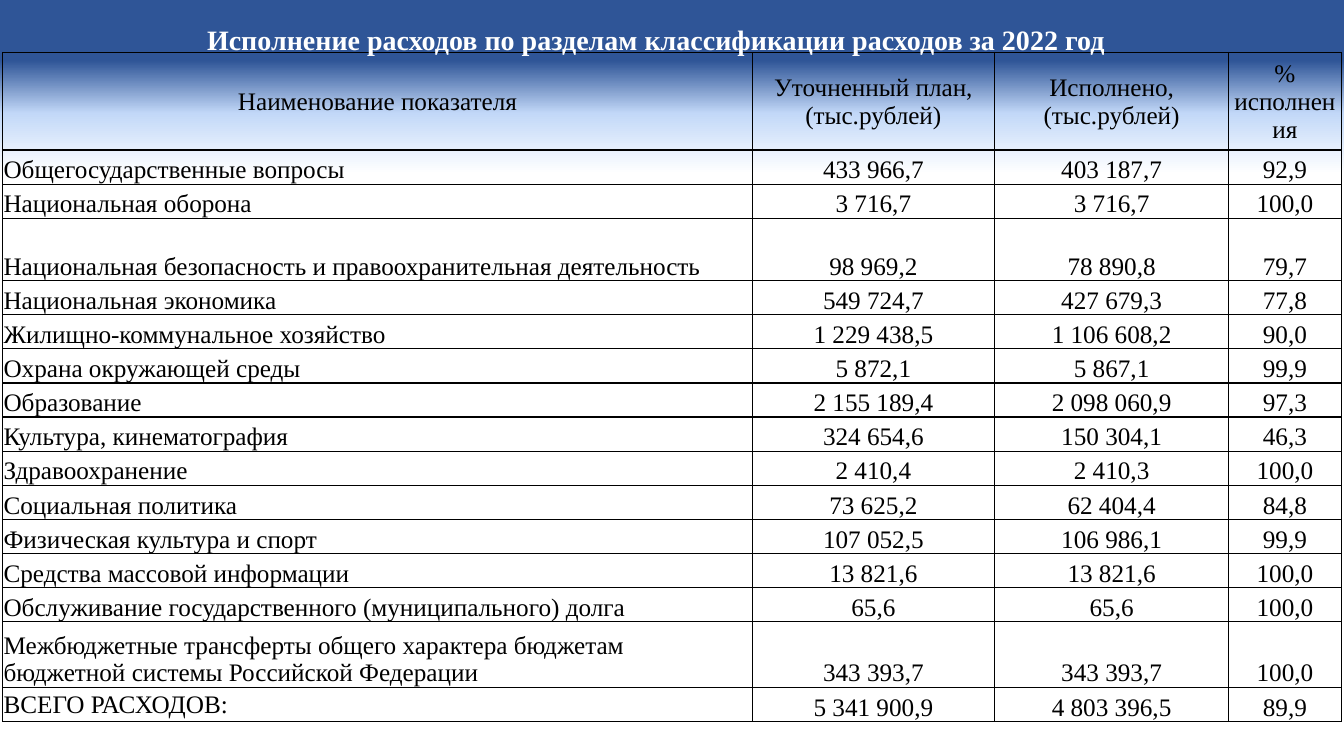
from dataclasses import dataclass

from lxml.etree import SubElement
from pptx import Presentation
from pptx.dml.color import RGBColor
from pptx.enum.text import MSO_ANCHOR, MSO_AUTO_SIZE, PP_ALIGN
from pptx.oxml.ns import qn
from pptx.util import Cm, Pt


@dataclass(frozen=True)
class Theme:
    font: str = "Times New Roman"
    title_size: int = 20
    table_size: int = 18
    title_color: str = "FFFFFF"
    text_color: str = "000000"
    border_color: str = "000000"
    border_width: int = 1
    background: tuple = ((8, "2F5597"), (15, "C2D8F8"), (23, "FFFFFF"))


THEME = Theme()

TITLE = "Исполнение расходов по разделам классификации расходов за 2022 год"
HEADER = ("Наименование показателя", "Уточненный план, (тыс.рублей)",
          "Исполнено, (тыс.рублей)", "% исполнения")
EXPENSES = (
    ("Общегосударственные вопросы", "433 966,7", "403 187,7", "92,9"),
    ("Национальная оборона", "3 716,7", "3 716,7", "100,0"),
    ("Национальная безопасность и правоохранительная деятельность",
     "98 969,2", "78 890,8", "79,7"),
    ("Национальная экономика", "549 724,7", "427 679,3", "77,8"),
    ("Жилищно-коммунальное хозяйство", "1 229 438,5", "1 106 608,2", "90,0"),
    ("Охрана окружающей среды", "5 872,1", "5 867,1", "99,9"),
    ("Образование", "2 155 189,4", "2 098 060,9", "97,3"),
    ("Культура, кинематография", "324 654,6", "150 304,1", "46,3"),
    ("Здравоохранение", "2 410,4", "2 410,3", "100,0"),
    ("Социальная политика", "73 625,2", "62 404,4", "84,8"),
    ("Физическая культура и спорт", "107 052,5", "106 986,1", "99,9"),
    ("Средства массовой информации", "13 821,6", "13 821,6", "100,0"),
    ("Обслуживание государственного (муниципального) долга",
     "65,6", "65,6", "100,0"),
    ("Межбюджетные трансферты общего характера бюджетам "
     "бюджетной системы Российской Федерации",
     "343 393,7", "343 393,7", "100,0"),
    ("ВСЕГО РАСХОДОВ:", "5 341 900,9", "4 803 396,5", "89,9"),
)
ROWS = (HEADER,) + EXPENSES
TOTAL_ROW = len(ROWS) - 1

# Column shares of the table width; row heights in cm
COLUMN_SHARES = (0.56, 0.181, 0.175, 0.084)
ROW_HEIGHT = 0.86
TALL_ROWS = {0: 2.46, 3: 1.57, 14: 1.65}


def style_font(p, size, color, bold=False):
    p.font.name = THEME.font
    p.font.size = Pt(size)
    p.font.bold = bold
    p.font.color.rgb = RGBColor.from_string(color)


def paint_background(s):
    fill = s.background.fill
    fill.gradient()
    fill.gradient_angle = 270
    stops = s._element.find(".//" + qn("a:gsLst"))
    for stop in list(stops):
        stops.remove(stop)
    for percent, color in THEME.background:
        stop = SubElement(stops, qn("a:gs"), pos=str(percent * 1000))
        SubElement(stop, qn("a:srgbClr"), val=color)


def add_borders(cell):
    tc_pr = cell._tc.get_or_add_tcPr()
    for side in ("lnL", "lnR", "lnT", "lnB"):
        line = SubElement(tc_pr, qn(f"a:{side}"), w=str(Pt(THEME.border_width)))
        fill = SubElement(line, qn("a:solidFill"))
        SubElement(fill, qn("a:srgbClr"), val=THEME.border_color)


def fill_cell(cell, text, centered, anchor):
    add_borders(cell)
    cell.fill.background()
    cell.margin_left = cell.margin_right = cell.margin_top = Cm(0.02)
    cell.margin_bottom = 0
    cell.vertical_anchor = anchor
    p = cell.text_frame.paragraphs[0]
    p.text = text
    p.alignment = PP_ALIGN.CENTER if centered else PP_ALIGN.LEFT
    style_font(p, THEME.table_size, THEME.text_color)


def add_expense_table(s, left, top, width):
    heights = [TALL_ROWS.get(i, ROW_HEIGHT) for i in range(len(ROWS))]
    table = s.shapes.add_table(len(ROWS), len(HEADER), Cm(left), Cm(top),
                               Cm(width), Cm(sum(heights))).table
    table.first_row = table.horz_banding = False
    for column, share in zip(table.columns, COLUMN_SHARES):
        column.width = Cm(width * share)
    for i, (row, height, values) in enumerate(zip(table.rows, heights, ROWS)):
        row.height = Cm(height)
        for j, (cell, text) in enumerate(zip(row.cells, values)):
            middle = i == 0 or (i == TOTAL_ROW and j == 0)
            fill_cell(cell, text, centered=i == 0 or j > 0,
                      anchor=MSO_ANCHOR.MIDDLE if middle else MSO_ANCHOR.BOTTOM)


def place_title(s, left, top, width, height):
    title = s.shapes.title
    title.left, title.top = Cm(left), Cm(top)
    title.width, title.height = Cm(width), Cm(height)
    tf = title.text_frame
    tf.word_wrap = True
    tf.auto_size = MSO_AUTO_SIZE.NONE
    tf.vertical_anchor = MSO_ANCHOR.TOP
    tf.margin_top = Cm(0.65)
    p = tf.paragraphs[0]
    p.text = TITLE
    p.alignment = PP_ALIGN.CENTER
    p.line_spacing = 0.9
    style_font(p, THEME.title_size, THEME.title_color, bold=True)
    # The title lies in front of the table's top border
    s.shapes._spTree.append(title._element)


def main():
    prs = Presentation()
    prs.slide_width, prs.slide_height = Cm(33.87), Cm(19.05)
    s = prs.slides.add_slide(prs.slide_layouts[5])
    paint_background(s)
    add_expense_table(s, left=0.07, top=1.32, width=33.73)
    place_title(s, left=1.93, top=0, width=29.21, height=2.59)
    prs.save("out.pptx")


if __name__ == "__main__":
    main()
